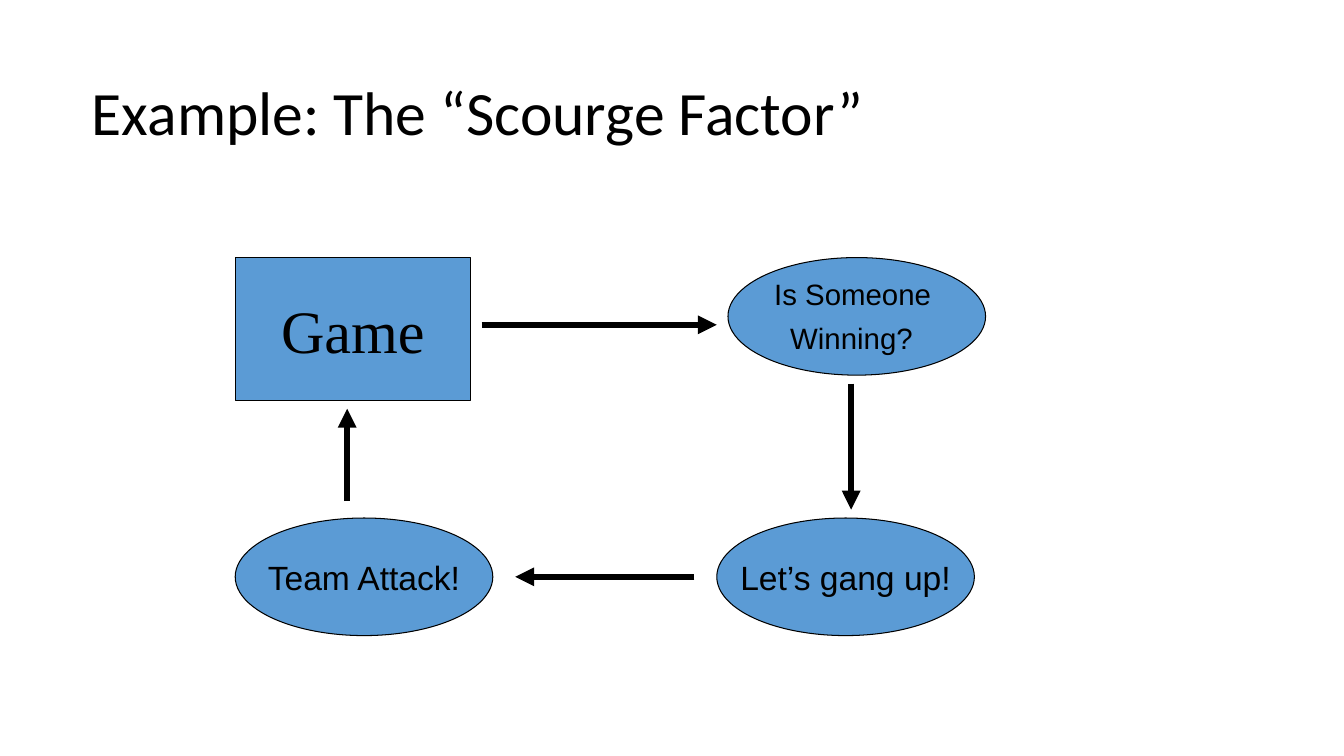
from pptx import Presentation
from pptx.util import Pt
from pptx.dml.color import RGBColor as RGB
from pptx.enum.shapes import MSO_CONNECTOR as LINK, MSO_SHAPE as FORM
from pptx.enum.text import MSO_ANCHOR as ANCHOR, MSO_AUTO_SIZE as FIT, PP_ALIGN as ALIGN
from pptx.oxml.ns import qn
from lxml.etree import SubElement as Sub

theme = {
    "ink": RGB(0, 0, 0), "fill": RGB(0x5B, 0x9B, 0xD5),
    "head": 44, "game": 43, "step": 24, "ask": 21, "gap": 27,
    "edge": 0.75, "arrow": 4.5,
}


def style(run, size, face):
    run.font.size = Pt(size)
    run.font.name = face
    run.font.color.rgb = theme["ink"]


def inset(frame):
    frame.margin_left = frame.margin_right = Pt(9.6)
    frame.margin_top = frame.margin_bottom = Pt(4.8)
    frame.auto_size = FIT.NONE


deck = Presentation()
deck.slide_width, deck.slide_height = Pt(960), Pt(540)
slide = deck.slides.add_slide(deck.slide_layouts[5])

title = slide.shapes.title
title.left, title.top, title.width, title.height = Pt(56), Pt(54), Pt(848), Pt(114)
frame = title.text_frame
frame.text = "Example: The “Scourge Factor”"
inset(frame)
frame.vertical_anchor = ANCHOR.TOP
line = frame.paragraphs[0]
line.alignment = ALIGN.LEFT
line.line_spacing = 0.9
style(line.runs[0], theme["head"], "Calibri")

nodes = [
    ("Game", FORM.RECTANGLE, 168, 184, 168, 102, "game", "Times New Roman"),
    ("Is Someone \nWinning?", FORM.OVAL, 520, 184, 184, 84, "ask", "Arial"),
    ("Let’s gang up!", FORM.OVAL, 512, 370, 184, 84, "step", "Arial"),
    ("Team Attack!", FORM.OVAL, 168, 370, 184, 84, "step", "Arial"),
]
for text, form, left, top, width, height, size, face in nodes:
    node = slide.shapes.add_shape(form, Pt(left), Pt(top), Pt(width), Pt(height))
    node.shadow.inherit = False
    node.fill.solid()
    node.fill.fore_color.rgb = theme["fill"]
    node.line.color.rgb = theme["ink"]
    node.line.width = Pt(theme["edge"])
    frame = node.text_frame
    frame.text = text
    inset(frame)
    frame.word_wrap = False
    frame.vertical_anchor = ANCHOR.MIDDLE
    for line in frame.paragraphs:
        line.alignment = ALIGN.CENTER
        style(line.runs[0], theme[size], face)
    if size == "ask":
        space = line.add_run()
        space.text = " "
        style(space, theme["gap"], face)

arrows = [
    (344, 232, 512, 232),
    (608, 274, 608, 364),
    (496, 412, 368, 412),
    (248, 358, 248, 292),
]
for ends in arrows:
    arrow = slide.shapes.add_connector(LINK.STRAIGHT, *[Pt(end) for end in ends])
    arrow.line.color.rgb = theme["ink"]
    arrow.line.width = Pt(theme["arrow"])
    Sub(arrow.line._get_or_add_ln(), qn("a:tailEnd"), type="triangle")
    Sub(arrow._element.spPr, qn("a:effectLst"))

deck.save("out.pptx")
